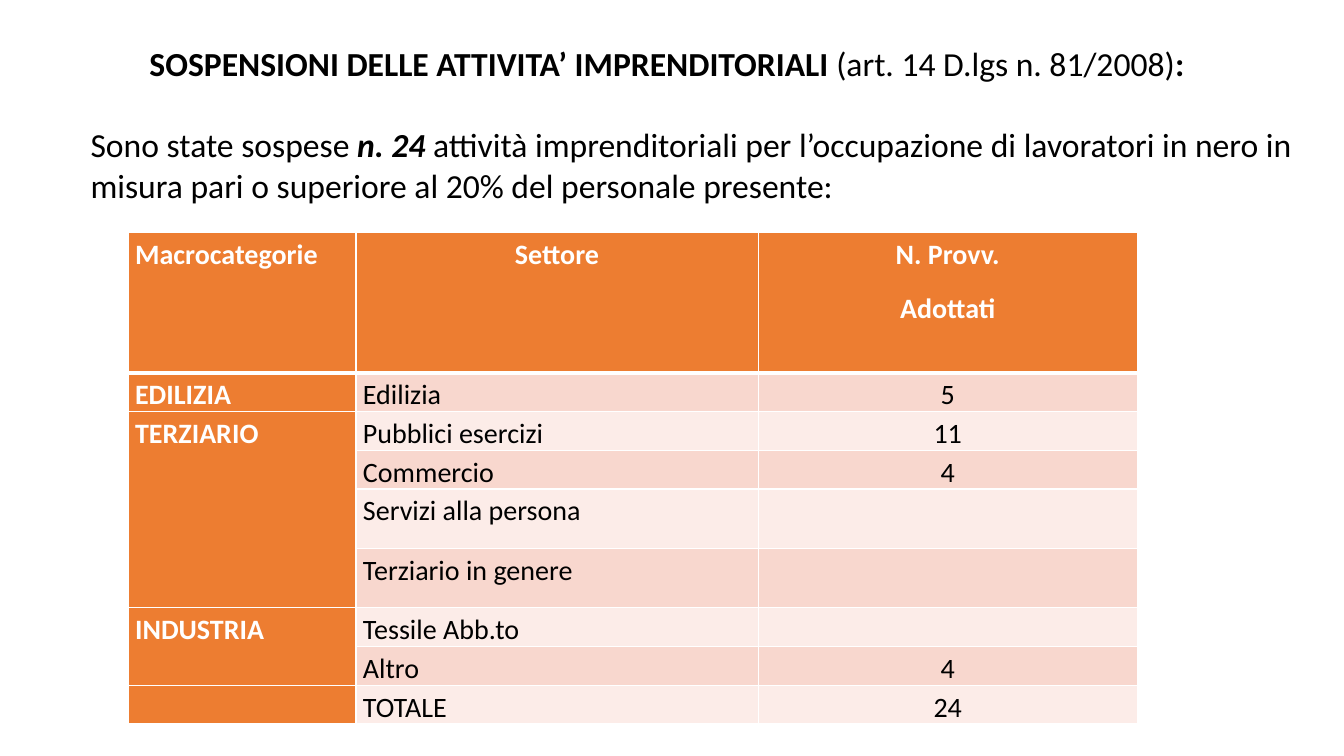
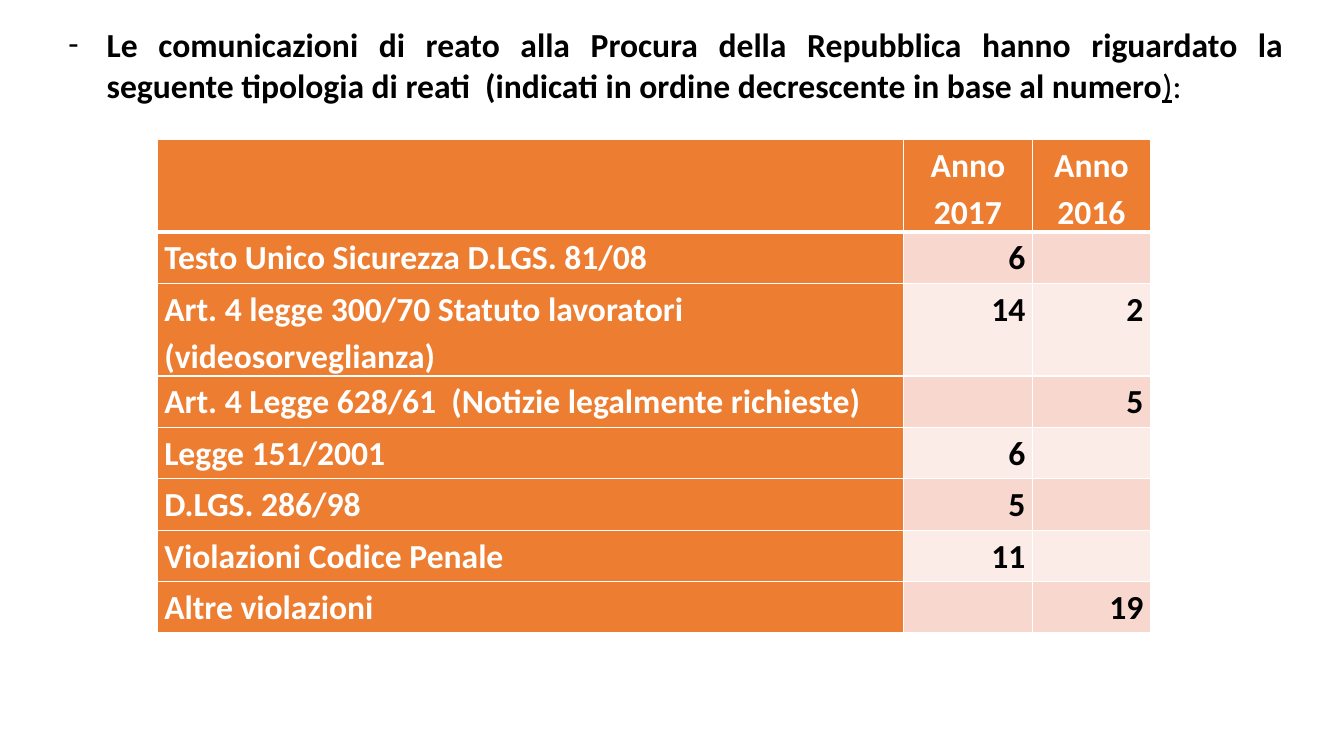
from dataclasses import dataclass
from typing import NamedTuple, Optional

from lxml.etree import SubElement
from pptx import Presentation
from pptx.dml.color import RGBColor
from pptx.enum.text import MSO_ANCHOR, PP_ALIGN as Align
from pptx.oxml import parse_xml
from pptx.oxml.ns import nsdecls, qn
from pptx.slide import Slide
from pptx.table import Table, _Cell as Cell
from pptx.text.text import TextFrame, _Paragraph as Paragraph, _Run as Run
from pptx.util import Inches, Length, Pt

FONT = "Calibri"
TEXT_SIZE = 24
BLACK, WHITE = "000000", "FFFFFF"
ACCENT = "ED7D31"
BANDS = ("F8D7CE", "FCECE8")
HEADER_ALIGNS = (Align.LEFT, Align.CENTER, Align.CENTER)
THIN, THICK = Pt(1), Pt(3)


class Piece(NamedTuple):
    text: str
    bold: bool = False
    italic: bool = False
    underline: bool = False


@dataclass
class TableSpec:
    left: float
    top: float
    widths: tuple[float, ...]
    heights: tuple[float, ...]
    rows: tuple[tuple[Optional[str], ...], ...]
    body_aligns: tuple[Align, ...]
    size: int
    body_bold: bool


SUSPENSIONS = TableSpec(
    left=1.27,
    top=2.31,
    widths=(2.26, 3.99, 3.76),
    heights=(1.39, 0.38, 0.38, 0.38, 0.59, 0.59, 0.38, 0.38, 0.38),
    rows=(
        ("Macrocategorie", "Settore", "N. Provv.\nAdottati"),
        ("EDILIZIA", "Edilizia", "5"),
        ("TERZIARIO", "Pubblici esercizi", "11"),
        (None, "Commercio", "4"),
        (None, "Servizi alla persona", ""),
        (None, "Terziario in genere", ""),
        ("INDUSTRIA", "Tessile Abb.to", ""),
        (None, "Altro", "4"),
        ("", "TOTALE", "24"),
    ),
    body_aligns=(Align.LEFT, Align.LEFT, Align.CENTER),
    size=20,
    body_bold=False,
)

OFFENCES = TableSpec(
    left=1.56,
    top=1.38,
    widths=(7.4, 1.28, 1.17),
    heights=(0.92, 0.51, 0.92, 0.51, 0.51, 0.51, 0.51, 0.51),
    rows=(
        ("", "Anno 2017", "Anno 2016"),
        ("Testo Unico Sicurezza D.LGS. 81/08", "6", ""),
        ("Art. 4 legge 300/70 Statuto lavoratori (videosorveglianza)", "14", "2"),
        ("Art. 4 Legge 628/61  (Notizie legalmente richieste)", "", "5"),
        ("Legge 151/2001", "6", ""),
        ("D.LGS. 286/98", "5", ""),
        ("Violazioni Codice Penale", "11", ""),
        ("Altre violazioni", "", "19"),
    ),
    body_aligns=(Align.LEFT, Align.RIGHT, Align.RIGHT),
    size=24,
    body_bold=True,
)


def colour(value: str) -> RGBColor:
    """Turn a hex string into a colour."""
    return RGBColor.from_string(value)


def format_run(run: Run, size: int, value: str, bold: bool) -> None:
    """Apply the shared font to a run."""
    run.font.name = FONT
    run.font.size = Pt(size)
    run.font.bold = bold
    run.font.color.rgb = colour(value)


def add_text_box(slide: Slide, left: float, top: float, width: float, height: float) -> TextFrame:
    """Add a wrapping text box and return its text frame."""
    frame = slide.shapes.add_textbox(
        Inches(left), Inches(top), Inches(width), Inches(height)
    ).text_frame
    frame.word_wrap = True
    return frame


def write_pieces(paragraph: Paragraph, pieces: tuple[Piece, ...]) -> None:
    """Write differently styled pieces into one paragraph."""
    for piece in pieces:
        run = paragraph.add_run()
        run.text = piece.text
        format_run(run, TEXT_SIZE, BLACK, piece.bold)
        run.font.italic = piece.italic
        run.font.underline = piece.underline


def set_indent(paragraph: Paragraph, margin: float, first_line: float = 0) -> None:
    """Set the left margin and first-line indent."""
    properties = paragraph._p.get_or_add_pPr()
    properties.set("marL", str(Inches(margin)))
    properties.set("indent", str(Inches(first_line)))


def set_bullet(paragraph: Paragraph, character: str) -> None:
    """Give a paragraph a bullet character."""
    properties = paragraph._p.get_or_add_pPr()
    SubElement(properties, qn("a:buFont")).set("typeface", FONT)
    SubElement(properties, qn("a:buChar")).set("char", character)


def set_borders(cell: Cell, top: Length, bottom: Length) -> None:
    """Draw white borders round a cell."""
    properties = cell._tc.get_or_add_tcPr()
    sides = (("lnL", THIN), ("lnR", THIN), ("lnT", top), ("lnB", bottom))
    for position, (tag, width) in enumerate(sides):
        line = parse_xml(
            f'<a:{tag} {nsdecls("a")} w="{width}"><a:solidFill>'
            f'<a:srgbClr val="{WHITE}"/></a:solidFill></a:{tag}>'
        )
        properties.insert(position, line)


def write_cell(cell: Cell, text: str, align: Align, size: int, value: str, bold: bool) -> None:
    """Write and format the text of a cell."""
    cell.margin_left = cell.margin_right = Inches(0.07)
    cell.margin_top = cell.margin_bottom = Inches(0)
    cell.vertical_anchor = MSO_ANCHOR.TOP
    cell.text_frame.text = text
    for paragraph in cell.text_frame.paragraphs:
        paragraph.alignment = align
        paragraph.line_spacing = 1.15
        paragraph.space_after = Pt(10)
        for run in paragraph.runs:
            format_run(run, size, value, bold)


def merge_labels(table: Table, spec: TableSpec) -> None:
    """Merge each row label with the unlabelled rows below it."""
    starts = [index for index, row in enumerate(spec.rows) if row[0] is not None]
    for start, following in zip(starts, starts[1:] + [len(spec.rows)]):
        if following - start > 1:
            table.cell(start, 0).merge(table.cell(following - 1, 0))


def draw_table(slide: Slide, spec: TableSpec) -> None:
    """Draw a table with accent headings and banded values."""
    table = slide.shapes.add_table(
        len(spec.rows), len(spec.widths), Inches(spec.left), Inches(spec.top),
        Inches(sum(spec.widths)), Inches(sum(spec.heights)),
    ).table
    for column, width in zip(table.columns, spec.widths):
        column.width = Inches(width)
    for row, height in zip(table.rows, spec.heights):
        row.height = Inches(height)
    for row_index, texts in enumerate(spec.rows):
        is_header = row_index == 0
        aligns = HEADER_ALIGNS if is_header else spec.body_aligns
        for column_index, text in enumerate(texts):
            cell = table.cell(row_index, column_index)
            is_heading = is_header or column_index == 0
            cell.fill.solid()
            cell.fill.fore_color.rgb = colour(ACCENT if is_heading else BANDS[(row_index - 1) % 2])
            write_cell(
                cell, text or "", aligns[column_index], spec.size,
                WHITE if is_heading else BLACK, is_heading or spec.body_bold,
            )
            set_borders(cell, THICK if row_index == 1 else THIN, THICK if is_header else THIN)
    merge_labels(table, spec)


def draw_suspensions(slide: Slide) -> None:
    """Draw the slide on suspended businesses."""
    frame = add_text_box(slide, 0.3, 0.32, 12.63, 1.98)
    title = frame.paragraphs[0]
    title.alignment = Align.CENTER
    title.line_spacing = 1.15
    write_pieces(title, (
        Piece("SOSPENSIONI DELLE ATTIVITA’ IMPRENDITORIALI ", bold=True),
        Piece("(art. 14 D.lgs n. 81/2008)"),
        Piece(":", bold=True),
    ))
    summary = frame.add_paragraph()
    summary.space_before = Pt(29)
    set_indent(summary, 0.5)
    write_pieces(summary, (
        Piece("Sono state sospese "),
        Piece("n. 24", bold=True, italic=True),
        Piece(
            " attività imprenditoriali per l’occupazione di lavoratori in nero "
            "in misura pari o superiore al 20% del personale presente:"
        ),
    ))
    draw_table(slide, SUSPENSIONS)


def draw_offences(slide: Slide) -> None:
    """Draw the slide on reported offences."""
    introduction = add_text_box(slide, 0.58, 0.19, 12.25, 0.91).paragraphs[0]
    introduction.alignment = Align.JUSTIFY
    set_indent(introduction, 0.38, -0.38)
    set_bullet(introduction, "-")
    write_pieces(introduction, (
        Piece(
            "Le comunicazioni di reato alla Procura della Repubblica hanno riguardato la "
            "seguente tipologia di reati  (indicati in ordine decrescente in base al numero",
            bold=True,
        ),
        Piece(")", underline=True),
        Piece(":"),
    ))
    draw_table(slide, OFFENCES)


def main() -> None:
    """Build and save the presentation."""
    presentation = Presentation()
    presentation.slide_width = Inches(13.33)
    presentation.slide_height = Inches(7.5)
    blank_layout = presentation.slide_layouts[6]
    for draw in (draw_suspensions, draw_offences):
        draw(presentation.slides.add_slide(blank_layout))
    presentation.save("out.pptx")


if __name__ == "__main__":
    main()
